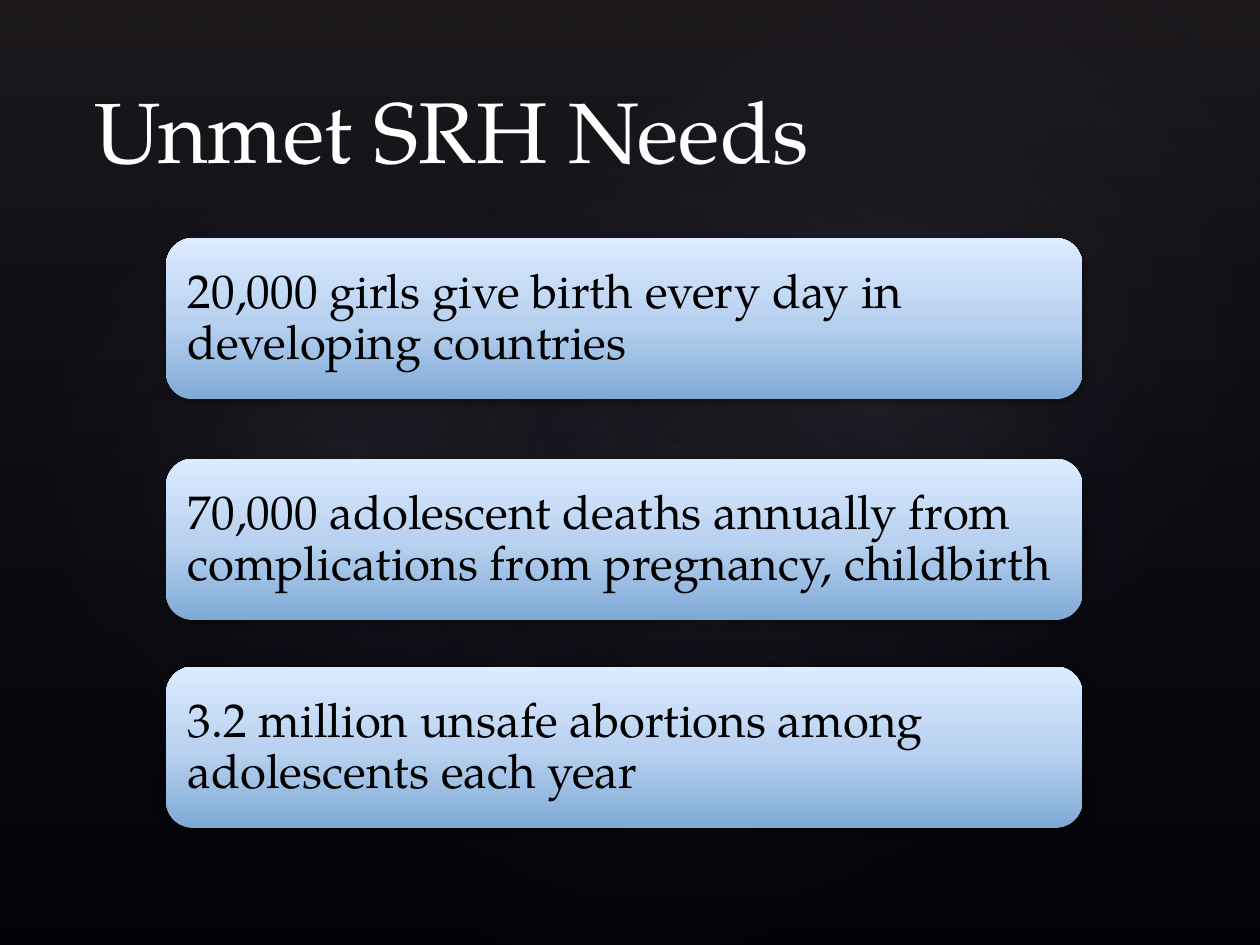
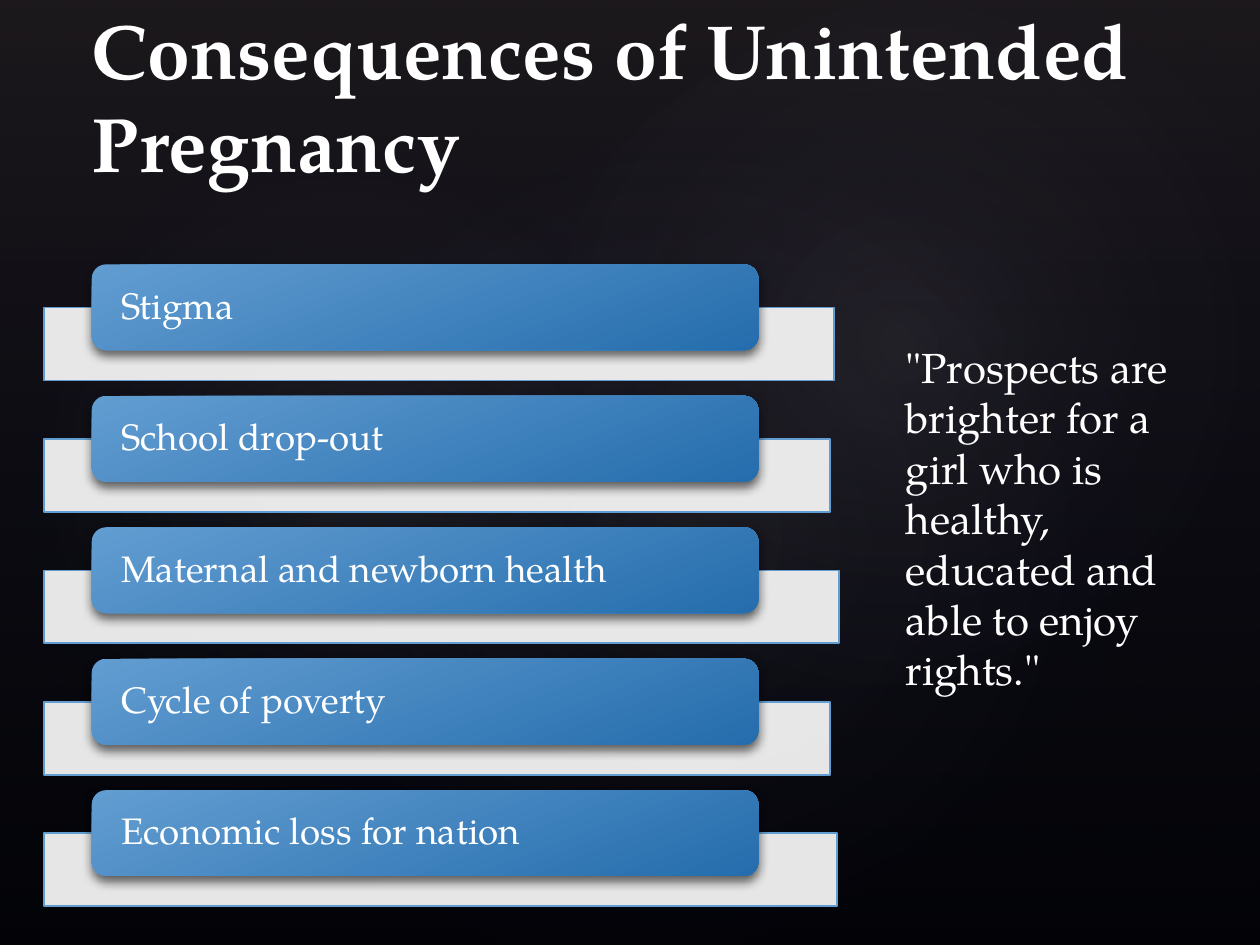
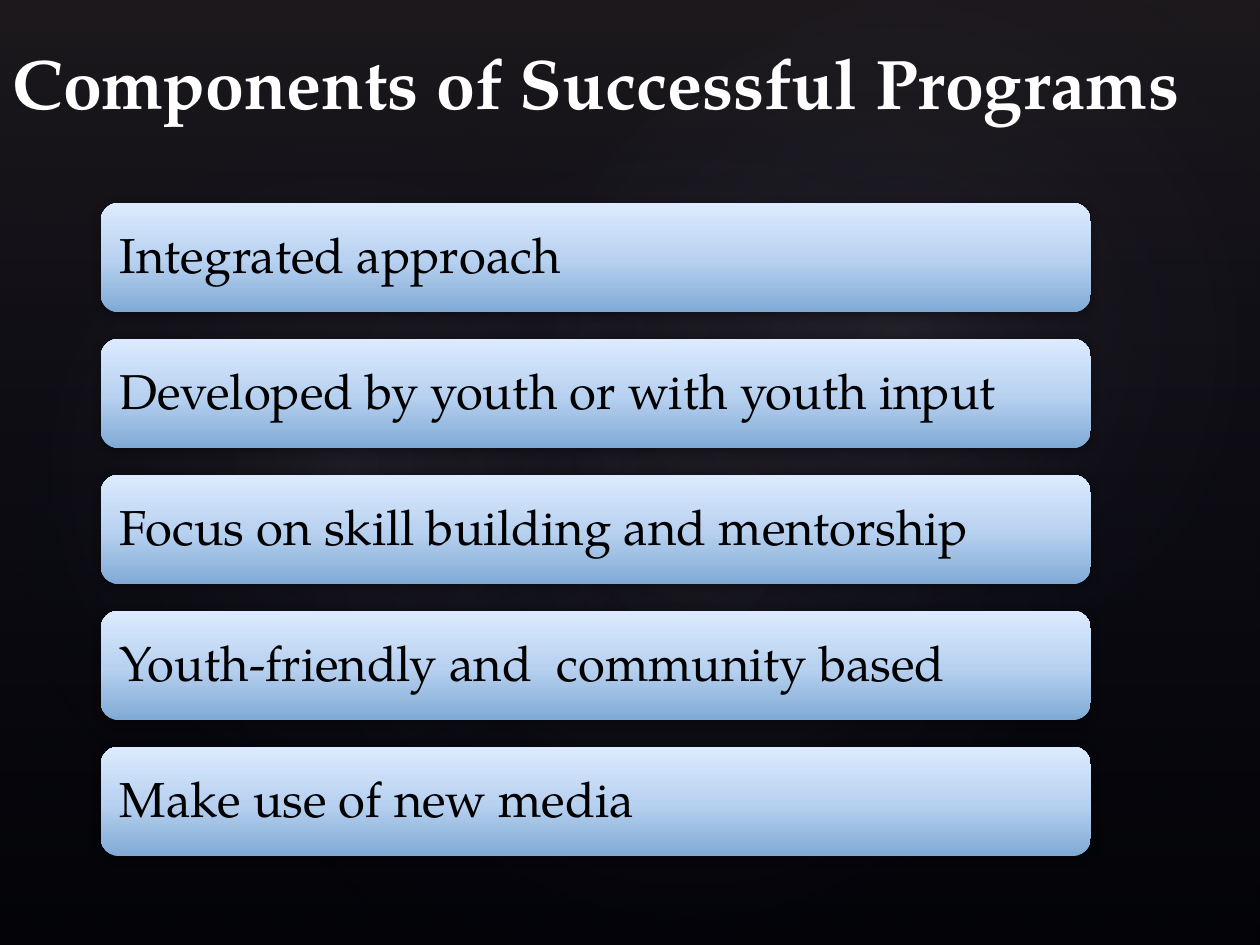
from pptx import Presentation
from pptx.dml.color import RGBColor as RGB
from pptx.enum.shapes import MSO_SHAPE as Kind
from pptx.enum.text import MSO_ANCHOR as Anchor, MSO_AUTO_SIZE as Fit, PP_ALIGN as Align
from pptx.oxml import parse_xml
from pptx.oxml.ns import nsdecls, qn
from pptx.util import Cm, Pt

FONT = "TeX Gyre Pagella"
BLACK = RGB(0, 0, 0)
WHITE = RGB(255, 255, 255)
BROWN = RGB(0x50, 0x46, 0x52)
NAVY = RGB(0x24, 0x28, 0x52)
MIST = RGB(0xC4, 0xBC, 0xC6)
SKY = RGB(0x62, 0x9D, 0xD1)
DEEP = RGB(0x25, 0x6D, 0xAD)

# Gradient stops: position %, colour, opacity %
PALE = [(0, RGB(0x7F, 0xAA, 0xD6), 100), (48, RGB(0xB8, 0xD1, 0xF0), 100),
        (100, RGB(0xDC, 0xEB, 0xFF), 100)]
BLUE = [(0, SKY, 100), (100, DEEP, 100)]
VEIL = [(0, BROWN, 36), (100, NAVY, 10)]

# Content, lengths in cm
NEEDS = [
    (4.8, "20,000 girls give birth every day in developing countries"),
    (9.25, "70,000 adolescent deaths annually from complications from pregnancy, childbirth"),
    (13.44, "3.2 million unsafe abortions among adolescents each year"),
]
EFFECTS = [  # bar width, label
    (15.93, "Stigma"),
    (15.85, "School drop-out"),
    (16.03, "Maternal and newborn health"),
    (15.85, "Cycle of poverty"),
    (15.98, "Economic loss for nation"),
]
QUOTE = '"Prospects are brighter for a girl who is healthy, educated and able to enjoy rights."'
PARTS = [
    "Integrated approach",
    "Developed by youth or with youth input",
    "Focus on skill building and mentorship",
    "Youth-friendly and  community based",
    "Make use of new media",
]
GLOWS = [  # box, rotation, opacity %
    ((3.81, 2.9, 20.12, 15.85), 328.7, 7),
    ((-0.76, 3.25, 15.39, 12.45), 294.3, 8),
    ((9.09, 0.33, 18.01, 13.21), 328.7, 8),
]


def blend(shape, stops, angle=None):
    """Gradient fill: linear at an angle, or round when there is none."""
    gs = "".join(
        f'<a:gs pos="{pos * 1000}"><a:srgbClr val="{hue}">'
        f'<a:alpha val="{alpha * 1000}"/></a:srgbClr></a:gs>'
        for pos, hue, alpha in stops)
    if angle is None:
        way = ('<a:path path="circle"><a:fillToRect l="50000" t="50000" '
               'r="50000" b="50000"/></a:path>')
    else:
        way = f'<a:lin ang="{angle * 60000}" scaled="0"/>'
    shape.fill.background()
    props = shape._element.spPr
    props.replace(props.find(qn("a:noFill")), parse_xml(
        f'<a:gradFill {nsdecls("a")} rotWithShape="1"><a:gsLst>{gs}</a:gsLst>{way}</a:gradFill>'))


def shade(shape, alpha, blur, dist):
    shape._element.spPr.find(qn("a:effectLst")).append(parse_xml(
        f'<a:outerShdw {nsdecls("a")} blurRad="{Pt(blur)}" dist="{Pt(dist)}" '
        f'dir="5400000" rotWithShape="0"><a:srgbClr val="{BLACK}">'
        f'<a:alpha val="{alpha * 1000}"/></a:srgbClr></a:outerShdw>'))


def draw(slide, kind, box):
    shape = slide.shapes.add_shape(kind, *map(Cm, box))
    shape.shadow.inherit = False
    shape.line.fill.background()
    return shape


def write(shape, text, size, color, bold=False):
    frame = shape.text_frame
    frame.word_wrap = True
    frame.text = text
    para = frame.paragraphs[0]
    para.alignment = Align.LEFT
    font = para.font
    font.name, font.size, font.bold = FONT, Pt(size), bold
    font.color.rgb = color
    return frame


def card(slide, box, text, size, color, inset):
    shape = draw(slide, Kind.ROUNDED_RECTANGLE, box)
    frame = write(shape, text, size, color)
    frame.paragraphs[0].line_spacing = 0.9
    frame.vertical_anchor = Anchor.MIDDLE
    frame.margin_left = frame.margin_right = Cm(inset)
    frame.margin_top = frame.margin_bottom = 0
    return shape


def pale(slide, box, text, size):
    shape = card(slide, box, text, size, BLACK, 0.28)
    blend(shape, PALE, 270)
    shade(shape, 32, 5, 1)


def page(deck, layout, title, box, size, bold=True):
    slide = deck.slides.add_slide(layout)
    head = slide.shapes.title
    head.left, head.top, head.width, head.height = map(Cm, box)
    frame = write(head, title, size, WHITE, bold)
    frame.auto_size = Fit.NONE
    frame.vertical_anchor = Anchor.BOTTOM
    return slide


def backdrop(slide, layout):
    """Draw the dark veil and glows, then move them to the shared layout."""
    fill = layout.background.fill
    fill.solid()
    fill.fore_color.rgb = BLACK
    veil = draw(slide, Kind.RECTANGLE, (0, 0, 25.4, 19.05))
    blend(veil, VEIL, 90)
    layers = [veil]
    for box, turn, alpha in GLOWS:
        glow = draw(slide, Kind.OVAL, box)
        glow.rotation = turn
        blend(glow, [(0, MIST, alpha), (58, NAVY, 0), (100, NAVY, 0)])
        layers.append(glow)
    for i, layer in enumerate(layers):
        node = layer._element
        node.nvSpPr.cNvPr.set("id", str(20 + i))
        layout.shapes._spTree.insert(2 + i, node)


def main():
    deck = Presentation()
    deck.slide_width, deck.slide_height = Cm(25.4), Cm(19.05)
    layout = deck.slide_layouts[5]

    # Needs
    slide = page(deck, layout, "Unmet SRH Needs", (1.65, 1.24, 20.96, 2.54), 49, False)
    backdrop(slide, layout)
    for top, text in NEEDS:
        pale(slide, (3.35, top, 18.47, 3.25), text, 27)

    # Consequences
    slide = page(deck, layout, "Consequences of Unintended Pregnancy",
                 (1.6, 1.37, 23.8, 2.54), 44)
    for i, (width, text) in enumerate(EFFECTS):
        top = 5.33 + 2.65 * i
        bar = draw(slide, Kind.RECTANGLE, (0.89, top + 0.87, width, 1.47))
        blend(bar, [(0, WHITE, 90), (100, WHITE, 90)], 0)
        bar.line.color.rgb = SKY
        bar.line.width = Pt(1)
        label = card(slide, (1.85, top, 13.44, 1.73), text, 21, WHITE, 0.51)
        blend(label, BLUE, 69)
        shade(label, 60, 6, 3)
    quote = slide.shapes.add_textbox(*map(Cm, (18.01, 6.76, 6.63, 7.44)))
    write(quote, QUOTE, 24, WHITE)

    # Components
    slide = page(deck, layout, "Components of Successful Programs",
                 (0, 0.08, 24.49, 2.54), 40)
    for i, text in enumerate(PARTS):
        pale(slide, (2.03, 4.09 + 2.74 * i, 19.96, 2.21), text, 28)

    deck.save("out.pptx")


if __name__ == "__main__":
    main()
